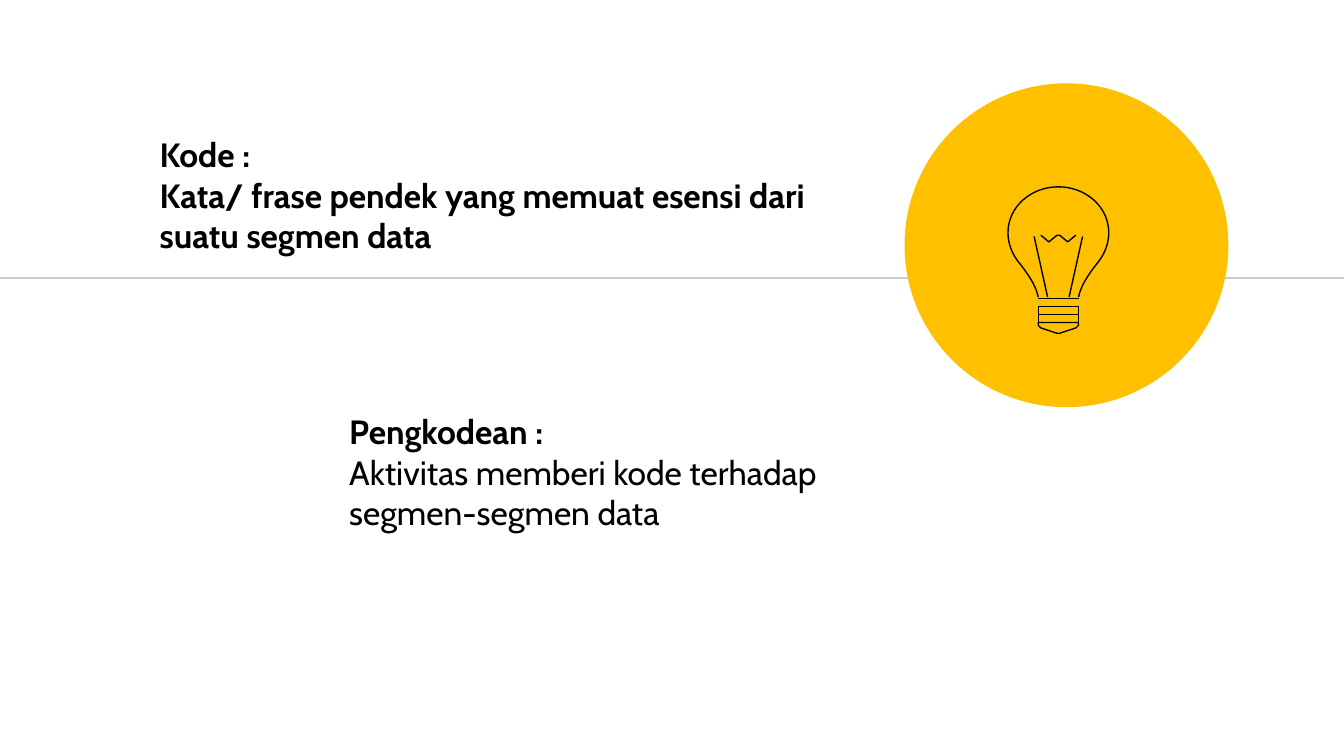
import dataclasses
import math

import pptx
import pptx.dml.color
import pptx.enum.shapes
import pptx.enum.text
import pptx.oxml
import pptx.util

Inches = pptx.util.Inches


@dataclasses.dataclass(frozen=True)
class Theme:
    font: str = "Cabin"
    size: float = 18
    ink: str = "000000"
    rule: str = "CCCCCC"
    accent: str = "FFC000"
    stroke: float = 0.75


def rgb(value):
    return pptx.dml.color.RGBColor.from_string(value)


def bezier(a, b, c, d, steps=10):
    """Return points on a cubic curve, leaving out its end point."""
    points = []
    for i in range(steps):
        t = i / steps
        u = 1 - t
        weights = (u ** 3, 3 * u * u * t, 3 * u * t * t, t ** 3)
        points.append(tuple(sum(w * q[k] for w, q in zip(weights, (a, b, c, d)))
                            for k in (0, 1)))
    return points


def quarter_ellipse(rx, ry, cy, steps=16):
    """Return points from the right end to the top of an ellipse at x = 0."""
    angles = [math.pi / 2 * i / steps for i in range(steps + 1)]
    return [(rx * math.cos(a), cy - ry * math.sin(a)) for a in angles]


class SlideBuilder:
    def __init__(self, prs, theme):
        self.theme = theme
        self.s = prs.slides.add_slide(prs.slide_layouts[6])

    def text(self, left, top, width, height, paragraphs):
        """Add a text box; paragraphs are (text, bold) pairs."""
        box = self.s.shapes.add_textbox(*map(Inches, (left, top, width, height)))
        tf = box.text_frame
        tf.word_wrap = True
        tf.vertical_anchor = pptx.enum.text.MSO_ANCHOR.TOP
        tf.margin_left = tf.margin_right = Inches(0.1)
        tf.margin_top = tf.margin_bottom = Inches(0.1)
        for i, (text, bold) in enumerate(paragraphs):
            p = tf.add_paragraph() if i else tf.paragraphs[0]
            r = p.add_run()
            r.text = text
            r.font.name = self.theme.font
            r.font.size = pptx.util.Pt(self.theme.size)
            r.font.bold = bold
            r.font.color.rgb = rgb(self.theme.ink)

    def line(self, x1, y1, x2, y2, color, shapes=None):
        sp = (shapes or self.s.shapes).add_connector(
            pptx.enum.shapes.MSO_CONNECTOR.STRAIGHT, *map(Inches, (x1, y1, x2, y2)))
        sp.line.color.rgb = rgb(color)
        sp.line.width = pptx.util.Pt(self.theme.stroke)
        sp._element.spPr.append(pptx.oxml.parse_xml(
            '<a:effectLst xmlns:a="http://schemas.openxmlformats.org/drawingml/2006/main"/>'))

    def circle(self, left, top, diameter):
        sp = self.s.shapes.add_shape(
            pptx.enum.shapes.MSO_SHAPE.OVAL,
            *map(Inches, (left, top, diameter, diameter)))
        sp.shadow.inherit = False
        sp.fill.solid()
        sp.fill.fore_color.rgb = rgb(self.theme.accent)
        sp.line.fill.background()

    def outline(self, shapes, points, close=False):
        start, *rest = [(Inches(x), Inches(y)) for x, y in points]
        builder = shapes.build_freeform(*start)
        builder.add_line_segments(rest, close=close)
        sp = builder.convert_to_shape()
        sp.shadow.inherit = False
        sp.fill.background()
        sp.line.color.rgb = rgb(self.theme.ink)
        sp.line.width = pptx.util.Pt(self.theme.stroke)

    def bulb(self, left, width):
        """Draw the bulb from half profiles given as (offset from axis, y)."""
        axis = left + width / 2
        shapes = self.s.shapes.add_group_shape().shapes

        def side(half, sign):
            return [(axis + sign * dx, y) for dx, y in half]

        def mirrored(half):
            return side(half, 1) + side(half[::-1], -1)

        foot, waist, shoulder = (0.15, 2.21), (0.28, 1.97), (width / 2, 1.73)
        glass = (bezier(foot, (0.17, 2.12), (0.22, 2.05), waist)
                 + bezier(waist, (0.34, 1.9), (width / 2, 1.82), shoulder)
                 + quarter_ellipse(width / 2, 0.34, 1.73))
        filament = [(0.13, 1.75), (0.07, 1.8), (0.01, 1.75)]
        support = [(0.18, 1.76), (0.08, 2.21)]
        tip = [(0.15, 2.4), (0.15, 2.42), (0.14, 2.43), (0.13, 2.44),
               (0.01, 2.48)]

        for top in (2.34, 2.28):
            self.outline(shapes, mirrored([(0.15, top), (0.15, top + 0.06)]), True)
        self.outline(shapes, mirrored(tip), True)
        self.outline(shapes, side(support, -1))
        self.outline(shapes, mirrored(glass))
        self.outline(shapes, side(support, 1))
        self.outline(shapes, mirrored(filament))
        self.outline(shapes, mirrored([(0.15, 2.22)]))


def main():
    prs = pptx.Presentation()
    prs.slide_width = Inches(10)
    prs.slide_height = prs.slide_width * 9 // 16
    theme = Theme()
    slide = SlideBuilder(prs, theme)
    slide.text(1.09, 0.9, 5.16, 0.86, [
        ("Kode :", True),
        ("Kata/ frase pendek yang memuat esensi dari suatu segmen data", True)])
    slide.line(0, 2.07, 10.02, 2.07, theme.rule)
    slide.circle(6.73, 0.62, 2.41)
    slide.bulb(7.5, 0.75)
    slide.text(2.5, 2.96, 4.76, 0.86, [
        ("Pengkodean :", True),
        ("Aktivitas memberi kode terhadap", False),
        ("segmen-segmen data", False)])
    prs.save("out.pptx")


if __name__ == "__main__":
    main()
